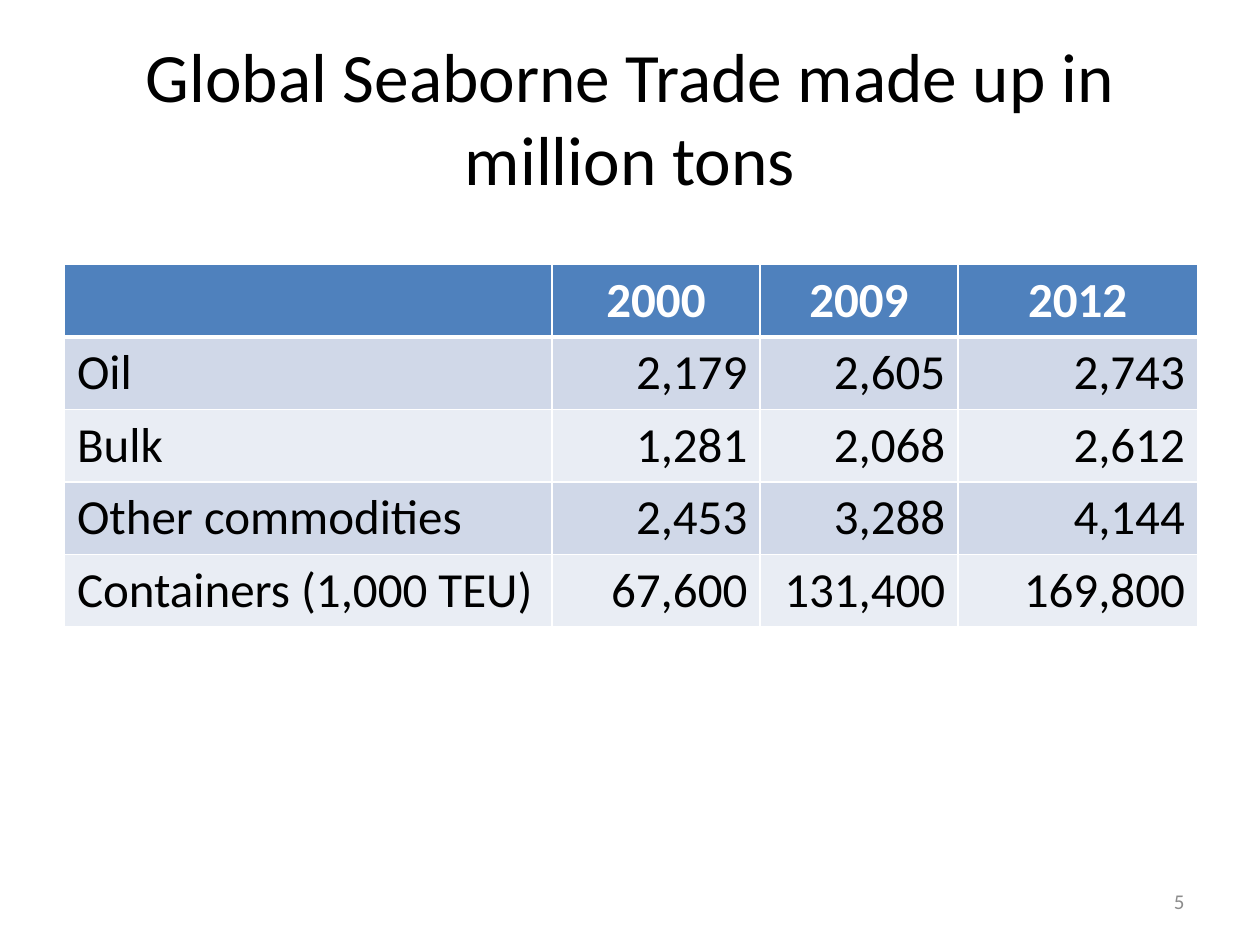
from dataclasses import dataclass

from lxml import etree
from pptx import Presentation
from pptx import util as u
from pptx.dml.color import RGBColor
from pptx.enum import text
from pptx.oxml.ns import qn


@dataclass(frozen=True)
class Theme:
    font: str = "Calibri"
    title_size: float = 39.6
    table_size: float = 28
    number_size: float = 12
    black: str = "000000"
    white: str = "FFFFFF"
    grey: str = "8C8C8C"
    header: str = "4F81BD"
    bands: tuple = ("D0D8E8", "E9EDF4")


theme = Theme()
ALIGN = text.PP_ALIGN


def write(tf, words, size, color=theme.black, bold=False, align=ALIGN.LEFT):
    p = tf.paragraphs[0]
    p.alignment = align
    r = p.add_run()
    r.text = words
    r.font.name = theme.font
    r.font.size = u.Pt(size)
    r.font.bold = bold
    r.font.color.rgb = RGBColor.from_string(color)


def add_border(cell, side, width):
    ln = etree.SubElement(cell._tc.get_or_add_tcPr(), qn("a:ln" + side),
                          w=str(u.Pt(width)))
    fill = etree.SubElement(ln, qn("a:solidFill"))
    etree.SubElement(fill, qn("a:srgbClr"), val=theme.white)


prs = Presentation()
prs.slide_width, prs.slide_height = u.Cm(25.4), u.Cm(19.05)
s = prs.slides.add_slide(prs.slide_layouts[5])

# Title
title = s.shapes.title
title.left, title.top = u.Cm(1.27), u.Cm(0.76)
title.width, title.height = u.Cm(22.86), u.Cm(3.18)
tf = title.text_frame
tf.word_wrap = True
tf.auto_size = text.MSO_AUTO_SIZE.NONE
tf.vertical_anchor = text.MSO_ANCHOR.MIDDLE
write(tf, "Global Seaborne Trade made up in million tons",
      theme.title_size, align=ALIGN.CENTER)

# Trade table
rows = [
    ("", "2000", "2009", "2012"),
    ("Oil", "2,179", "2,605", "2,743"),
    ("Bulk", "1,281", "2,068", "2,612"),
    ("Other commodities", "2,453", "3,288", "4,144"),
    ("Containers (1,000 TEU)", "67,600", "131,400", "169,800"),
]
col_widths = [9.83, 4.19, 3.99, 4.83]
row_height = 1.46
table = s.shapes.add_table(
    len(rows), len(col_widths), u.Cm(1.3), u.Cm(5.33),
    u.Cm(sum(col_widths)), u.Cm(row_height * len(rows))).table
for column, width in zip(table.columns, col_widths):
    column.width = u.Cm(width)

for i, row in enumerate(rows):
    table.rows[i].height = u.Cm(row_height)
    is_header = i == 0
    for j, words in enumerate(row):
        cell = table.cell(i, j)
        for side in "LRTB":
            under_header = (i, side) in ((0, "B"), (1, "T"))
            add_border(cell, side, 3 if under_header else 1)
        cell.fill.solid()
        cell.fill.fore_color.rgb = RGBColor.from_string(
            theme.header if is_header else theme.bands[(i - 1) % 2])
        if words:
            align = (ALIGN.CENTER if is_header
                     else ALIGN.RIGHT if j else ALIGN.LEFT)
            write(cell.text_frame, words, theme.table_size,
                  color=theme.white if is_header else theme.black,
                  bold=is_header, align=align)

# Slide number
number = s.shapes.add_textbox(u.Cm(18.2), u.Cm(17.66), u.Cm(5.93), u.Cm(1.01))
tf = number.text_frame
tf.word_wrap = True
tf.vertical_anchor = text.MSO_ANCHOR.MIDDLE
write(tf, "5", theme.number_size, color=theme.grey, align=ALIGN.RIGHT)

prs.save("out.pptx")
